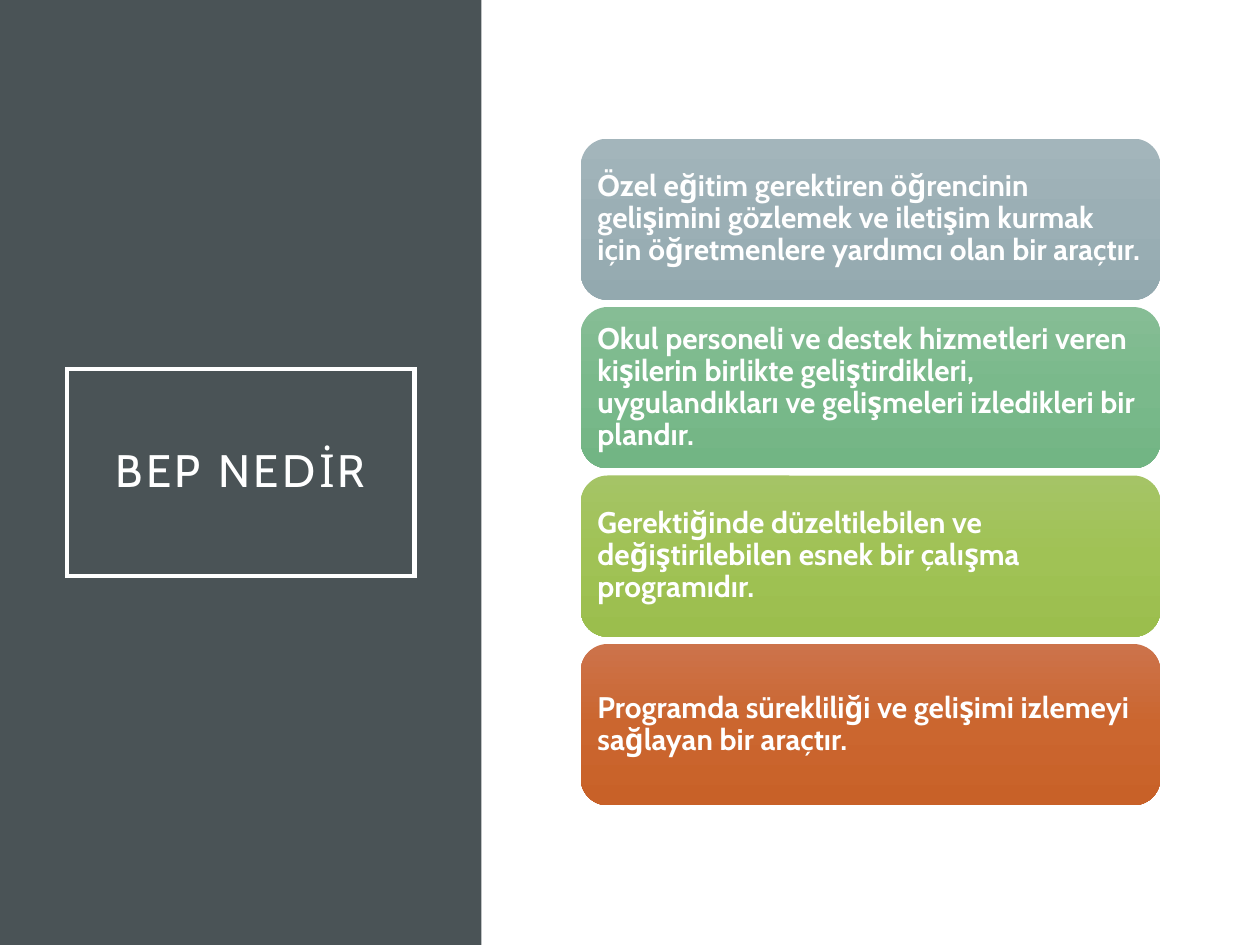
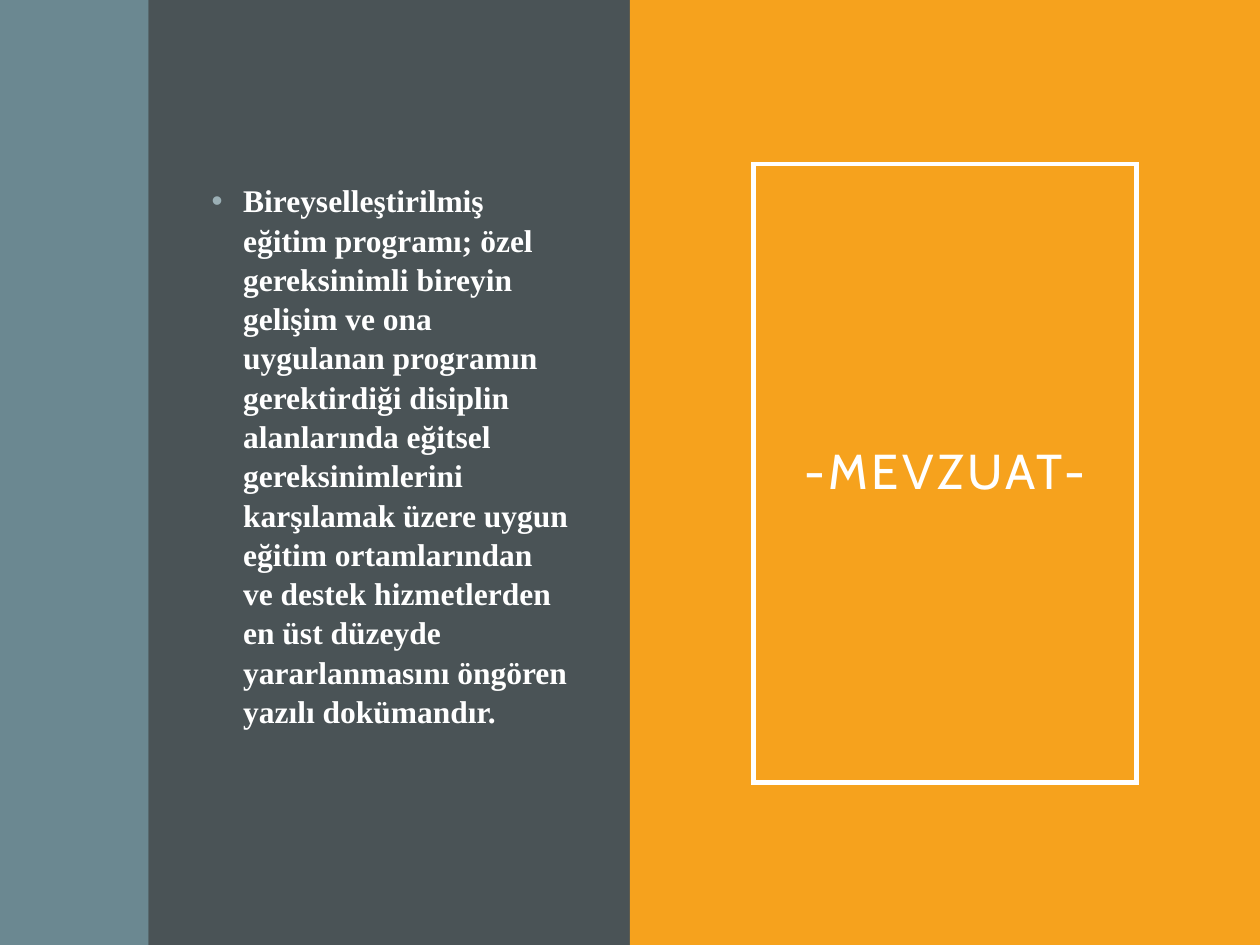
from copy import deepcopy
from lxml.etree import SubElement as Sub
from pptx import Presentation
from pptx.dml.color import RGBColor
from pptx.enum.shapes import MSO_SHAPE as Kind
from pptx.enum.text import MSO_ANCHOR as Anchor, MSO_AUTO_SIZE as Auto, PP_ALIGN as Align
from pptx.oxml.ns import qn
from pptx.util import Inches, Pt

# Shared look
DARK, TEAL, GOLD, WHITE = "4A5356", "6B8891", "F6A21D", "FFFFFF"
SANS, SERIF = "Cabin", "Times New Roman"
WIDE, HIGH = 10, 7.5
BAND = 3.82

hue = RGBColor.from_string
deck = Presentation()
deck.slide_width, deck.slide_height = Inches(WIDE), Inches(HIGH)


def panel(slide, left, wide, fill):
    """Full-height colour band behind the placeholders."""
    band = slide.shapes.add_shape(Kind.RECTANGLE, Inches(left), 0, Inches(wide), Inches(HIGH))
    band.shadow.inherit = False
    band.fill.solid()
    band.fill.fore_color.rgb = hue(fill)
    band.line.fill.background()
    title = slide.shapes.title._element
    title.addprevious(band._element)


def write(shape, box, text, face, size, bold, inset):
    """Place a shape and fill it with one paragraph of white text."""
    shape.left, shape.top, shape.width, shape.height = map(Inches, box)
    frame = shape.text_frame
    frame.text = text
    frame.word_wrap, frame.auto_size = True, Auto.NONE
    frame.vertical_anchor = Anchor.MIDDLE
    frame.margin_left = frame.margin_right = Inches(inset)
    frame.margin_top = frame.margin_bottom = Inches(inset)
    par = frame.paragraphs[0]
    par.alignment, par.line_spacing, par.space_before = Align.LEFT, 0.9, 0
    font = par.font
    font.name, font.size, font.bold = face, Pt(size), bold
    font.color.rgb = hue(WHITE)
    return par


# Slides with their bands and framed titles
pages = [
    (5, WHITE, [(0, BAND, DARK)], "BEP NEDİR", 26, (0.53, 2.93, 2.76, 1.64)),
    (1, DARK, [(0, WIDE / 2 - BAND, TEAL), (WIDE / 2 - BAND, BAND, DARK), (WIDE / 2, WIDE / 2, GOLD)],
     "-MEVZUAT-", 28, (5.98, 1.3, 3.04, 4.91)),
]
for num, back, bands, name, size, box in pages:
    slide = deck.slides.add_slide(deck.slide_layouts[num])
    slide.background.fill.solid()
    slide.background.fill.fore_color.rgb = hue(back)
    for band in bands:
        panel(slide, *band)
    title = slide.shapes.title
    par = write(title, box, name, SANS, size, False, 0.2)
    par.alignment = Align.CENTER
    par.runs[0]._r.get_or_add_rPr().set("spc", "200")
    title.line.color.rgb = hue(WHITE)
    title.line.width = Pt(2.5)
    Sub(title.line._get_or_add_ln(), qn("a:miter"), lim="800000")
first, last = deck.slides

# Slide 1: stack of gradient tiles
tiles = [
    ("Özel eğitim gerektiren öğrencinin gelişimini gözlemek ve iletişim kurmak için "
     "öğretmenlere yardımcı olan bir araçtır.", ("A3B5BB", "9BAFB5", "93A9AF")),
    ("Okul personeli ve destek hizmetleri veren kişilerin birlikte geliştirdikleri, "
     "uygulandıkları ve gelişmeleri izledikleri bir plandır.", ("86BD95", "7AB98B", "72B584")),
    ("Gerektiğinde düzeltilebilen ve değiştirilebilen esnek bir çalışma programıdır.",
     ("A5C466", "A0C255", "9BBE4D")),
    ("Programda sürekliliği ve gelişimi izlemeyi sağlayan bir araçtır.",
     ("CC734B", "CB662F", "C86128")),
]
TOP, STEP, TALL = 1.1, 1.337, 1.28
for row, (text, tones) in enumerate(tiles):
    tile = first.shapes.add_shape(Kind.ROUNDED_RECTANGLE, 0, 0, 0, 0)
    tile.shadow.inherit = False
    tile.line.fill.background()
    write(tile, (4.61, TOP + row * STEP, 4.6, TALL), text, SANS, 17, True, 0.07)
    tile.fill.gradient()
    tile.fill.gradient_angle = 270
    stop = tile._element.find(".//" + qn("a:gs"))
    stop.addnext(deepcopy(stop))
    for spot, tone, place in zip(tile.fill.gradient_stops, tones, (0, 0.5, 1)):
        spot.color.rgb = hue(tone)
        spot.position = place

# Slide 2: bulleted definition
body = last.placeholders[1]
par = write(
    body, (1.58, 0.71, 3.04, 6.07),
    "Bireyselleştirilmiş eğitim programı; özel gereksinimli bireyin gelişim ve ona uygulanan "
    "programın gerektirdiği disiplin alanlarında eğitsel gereksinimlerini karşılamak üzere uygun "
    "eğitim ortamlarından ve destek hizmetlerden en üst düzeyde yararlanmasını öngören yazılı "
    "dokümandır.", SERIF, 18, True, 0.1)
par.line_spacing = 1.04
body.text_frame.margin_bottom = Inches(0.37)
props = par._p.get_or_add_pPr()
props.set("marL", str(Inches(0.25)))
props.set("indent", str(-Inches(0.25)))
tint = props.makeelement(qn("a:buClr"))
Sub(tint, qn("a:srgbClr"), val="9BAFB5")
mark = props.makeelement(qn("a:buChar"), char="•")
props.find(qn("a:defRPr")).addprevious(tint)
tint.addnext(mark)

deck.save("out.pptx")
